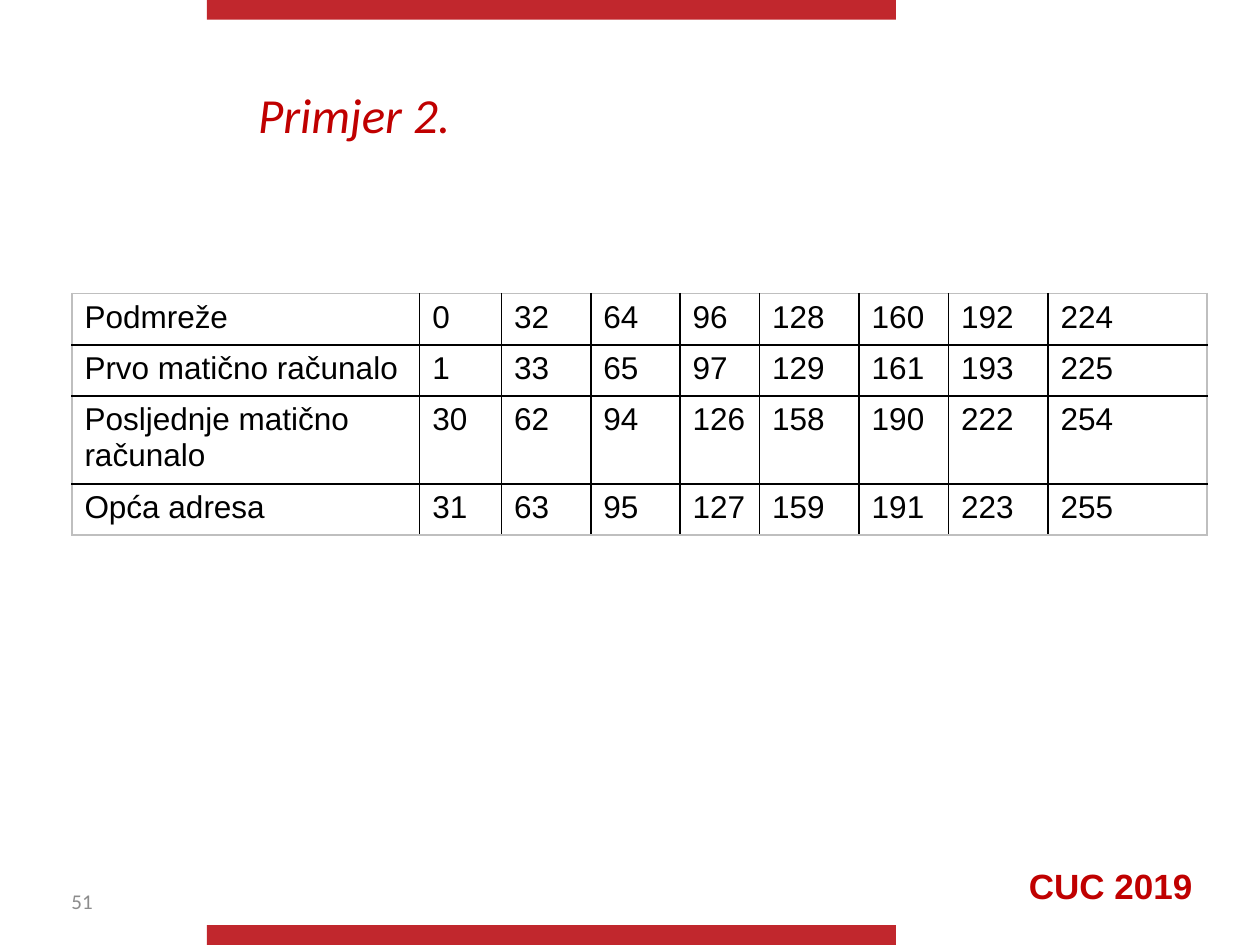
from dataclasses import dataclass

from lxml.etree import SubElement
from pptx import Presentation
from pptx.dml.color import RGBColor
from pptx.enum.shapes import MSO_SHAPE
from pptx.enum.text import MSO_ANCHOR, PP_ALIGN
from pptx.oxml.ns import qn
from pptx.util import Cm, Pt


@dataclass(frozen=True)
class Theme:
    bar: str = "C1272D"
    accent: str = "C00000"
    text: str = "000000"
    muted: str = "8C8C8C"
    grid: str = "000000"
    frame: str = "BFBFBF"
    heading_font: str = "Calibri"
    body_font: str = "Arial"
    title_size: int = 28
    event_size: int = 20
    table_size: int = 18
    number_size: int = 12


def write(tf, text, font, size, color, align=PP_ALIGN.LEFT, bold=False, italic=False):
    tf.text = text
    tf.word_wrap = True
    p = tf.paragraphs[0]
    p.alignment = align
    r = p.runs[0]
    r.font.name = font
    r.font.size = Pt(size)
    r.font.bold = bold
    r.font.italic = italic
    r.font.color.rgb = RGBColor.from_string(color)


def add_border(cell, side, color):
    ln = SubElement(cell._tc.get_or_add_tcPr(), qn(f"a:{side}"), w=str(Pt(1)))
    fill = SubElement(ln, qn("a:solidFill"))
    SubElement(fill, qn("a:srgbClr"), val=color)


theme = Theme()
prs = Presentation()
prs.slide_width = Cm(25.4)
prs.slide_height = Cm(19.05)
s = prs.slides.add_slide(prs.slide_layouts[5])

bar_height = Cm(0.4)
for top in (prs.slide_height - bar_height, 0):
    sp = s.shapes.add_shape(MSO_SHAPE.RECTANGLE, Cm(4.17), top, Cm(13.89), bar_height)
    sp.shadow.inherit = False
    sp.fill.solid()
    sp.fill.fore_color.rgb = RGBColor.from_string(theme.bar)
    sp.line.fill.background()

event = s.shapes.add_textbox(Cm(20.09), Cm(17.3), Cm(4.6), Cm(1.12))
write(event.text_frame, "CUC 2019", theme.body_font, theme.event_size, theme.accent,
      align=PP_ALIGN.CENTER, bold=True)

title = s.shapes.title
title.left, title.top, title.width, title.height = Cm(4.95), Cm(1.4), Cm(19.25), Cm(1.78)
write(title.text_frame, "Primjer 2.", theme.heading_font, theme.title_size, theme.accent,
      italic=True)
title.text_frame.vertical_anchor = MSO_ANCHOR.MIDDLE

number = s.shapes.add_textbox(Cm(1.19), Cm(17.65), Cm(5.92), Cm(1.02))
write(number.text_frame, "51", theme.heading_font, theme.number_size, theme.muted)
number.text_frame.vertical_anchor = MSO_ANCHOR.MIDDLE

address_rows = [
    ("Podmreže", 0),
    ("Prvo matično računalo", 1),
    ("Posljednje matično računalo", 30),
    ("Opća adresa", 31),
]
subnets = range(0, 256, 32)
col_widths = [7.01, 1.65, 1.8, 1.8, 1.6, 2.01, 1.8, 2.01, 3.2]
row_height = 1.03
last_row, last_col = len(address_rows) - 1, len(col_widths) - 1

table = s.shapes.add_table(
    len(address_rows), len(col_widths), Cm(1.45), Cm(5.92),
    Cm(sum(col_widths)), Cm(row_height * len(address_rows)),
).table
table.first_row = False
table.horz_banding = False
for column, width in zip(table.columns, col_widths):
    column.width = Cm(width)

for i, (label, offset) in enumerate(address_rows):
    table.rows[i].height = Cm(row_height)
    values = [label] + [str(subnet + offset) for subnet in subnets]
    for j, value in enumerate(values):
        cell = table.cell(i, j)
        write(cell.text_frame, value, theme.body_font, theme.table_size, theme.text)
        outer = {"lnL": j == 0, "lnR": j == last_col, "lnT": i == 0, "lnB": i == last_row}
        for side, is_outer in outer.items():
            add_border(cell, side, theme.frame if is_outer else theme.grid)
        cell.fill.background()

prs.save("out.pptx")
